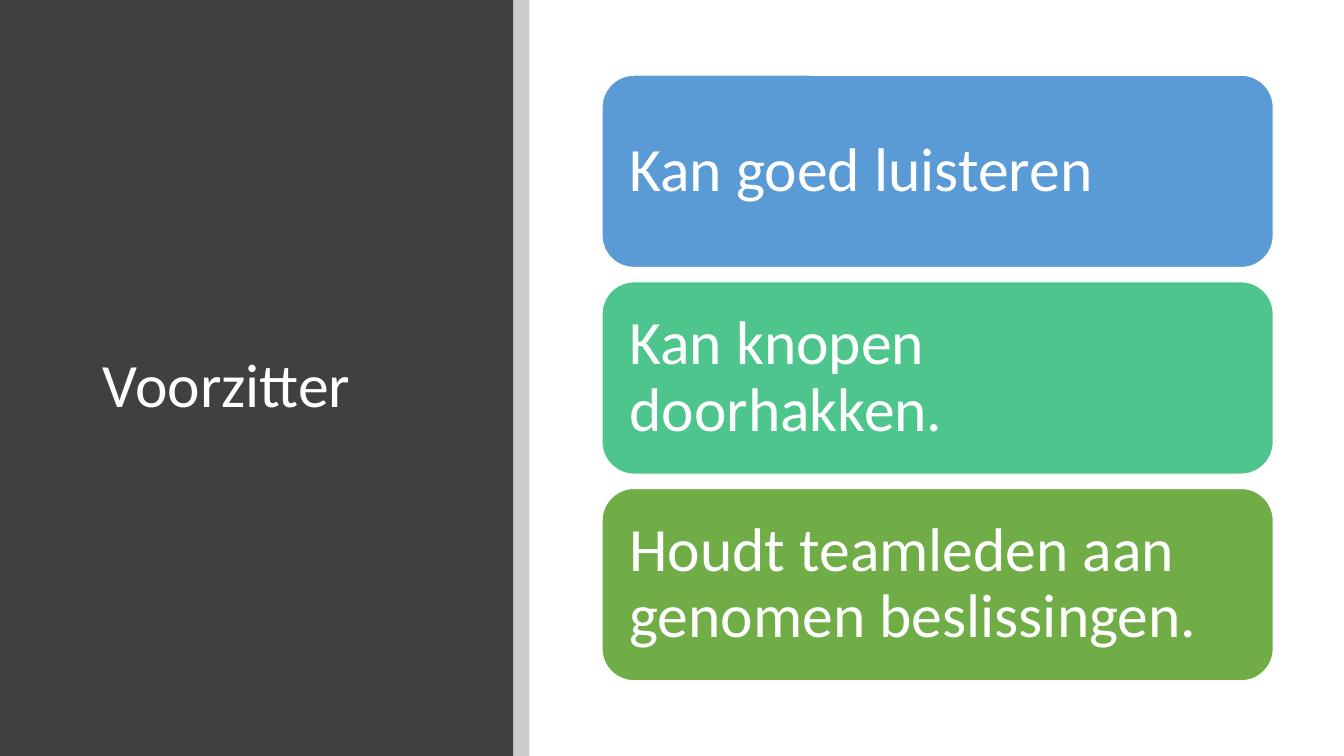
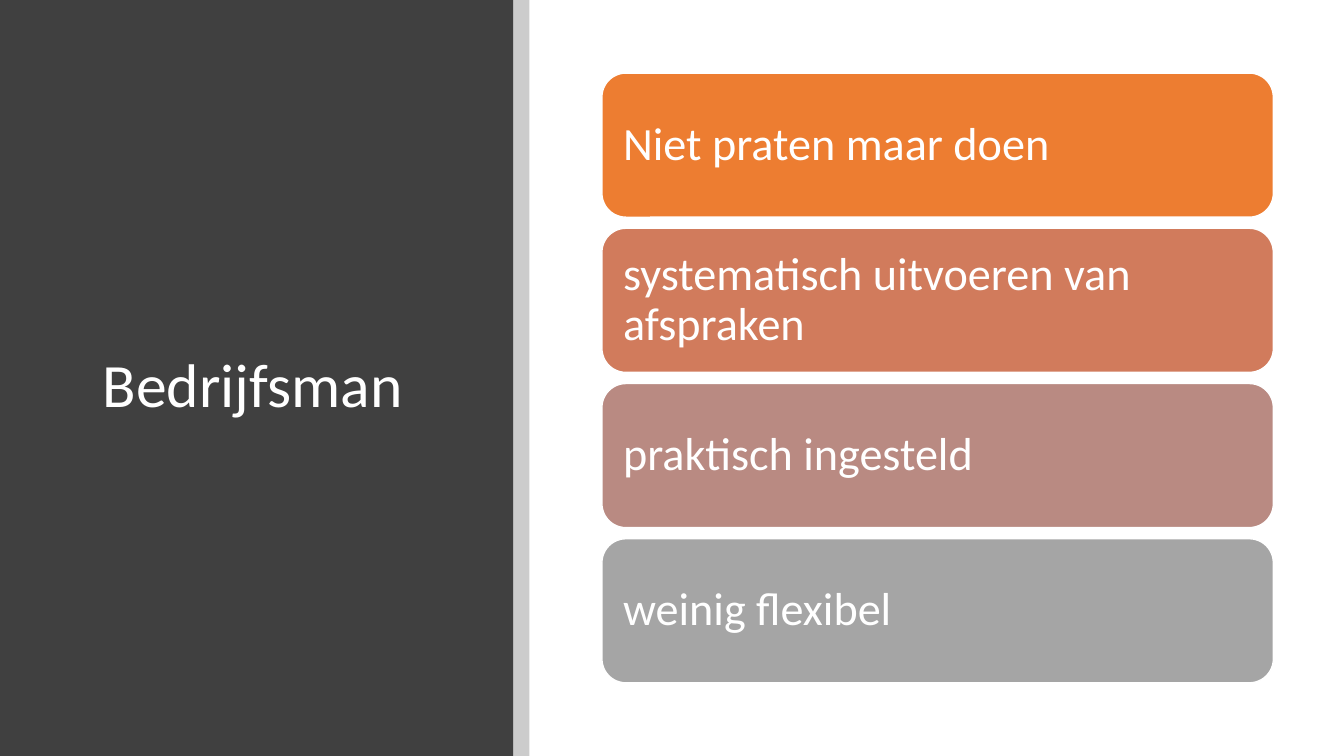
from dataclasses import dataclass

from lxml import etree
from pptx import Presentation
from pptx.dml.color import RGBColor
from pptx.enum import shapes, text
from pptx.oxml import ns
from pptx.util import Inches, Pt


@dataclass(frozen=True)
class Theme:
    font: str = "Calibri"
    panel: str = "404040"
    strip: str = "000000"
    strip_opacity: int = 20
    white: str = "FFFFFF"
    title_size: int = 44
    line_spacing: float = 0.9


@dataclass(frozen=True)
class Card:
    label: str
    color: str


@dataclass(frozen=True)
class Role:
    title: str
    cards: tuple[Card, ...]
    card_height: float
    gap: float
    inset: float
    size: int


THEME = Theme()
SLIDE_W, SLIDE_H = 13.33, 7.5
PANEL_W, STRIP_W = 5.09, 0.16
CARD_LEFT, CARD_W = 5.97, 6.66
CARD_RIGHT_INSET = 0.25

ROLES = (
    Role("Voorzitter", (
        Card("Kan goed luisteren", "5B9BD5"),
        Card("Kan knopen doorhakken.", "4DC58D"),
        Card("Houdt teamleden aan genomen beslissingen.", "70AD47"),
    ), card_height=1.91, gap=0.14, inset=0.18, size=44),
    Role("Bedrijfsman", (
        Card("Niet praten maar doen", "ED7D31"),
        Card("systematisch uitvoeren van afspraken", "D17B5C"),
        Card("praktisch ingesteld", "B98A82"),
        Card("weinig flexibel", "A5A5A5"),
    ), card_height=1.43, gap=0.11, inset=0.14, size=33),
)


def add_box(s, kind, left: float, top: float, width: float, height: float, color: str):
    sp = s.shapes.add_shape(kind, Inches(left), Inches(top), Inches(width), Inches(height))
    sp.shadow.inherit = False
    sp.fill.solid()
    sp.fill.fore_color.rgb = RGBColor.from_string(color)
    sp.line.fill.background()
    return sp


def set_opacity(sp, percent: int) -> None:
    clr = sp.fill._xPr.find(ns.qn("a:solidFill"))[0]
    etree.SubElement(clr, ns.qn("a:alpha")).set("val", str(percent * 1000))


def set_text(sp, label: str, size: int) -> None:
    tf = sp.text_frame
    tf.word_wrap = True
    tf.vertical_anchor = text.MSO_ANCHOR.MIDDLE
    tf.text = label
    p = tf.paragraphs[0]
    p.alignment = text.PP_ALIGN.LEFT
    p.line_spacing = THEME.line_spacing
    r = p.runs[0]
    r.font.name = THEME.font
    r.font.size = Pt(size)
    r.font.color.rgb = RGBColor.from_string(THEME.white)


def add_title_panel(s, title: str) -> None:
    rect = shapes.MSO_SHAPE.RECTANGLE
    add_box(s, rect, 0, 0, PANEL_W, SLIDE_H, THEME.panel)
    strip = add_box(s, rect, PANEL_W, 0, STRIP_W, SLIDE_H, THEME.strip)
    set_opacity(strip, THEME.strip_opacity)
    tb = s.shapes.add_textbox(Inches(0.92), Inches(0.89), Inches(3.65), Inches(5.91))
    set_text(tb, title, THEME.title_size)


def add_cards(s, role: Role) -> None:
    pitch = role.card_height + role.gap
    top = (SLIDE_H - len(role.cards) * pitch + role.gap) / 2
    for i, card in enumerate(role.cards):
        sp = add_box(s, shapes.MSO_SHAPE.ROUNDED_RECTANGLE, CARD_LEFT, top + i * pitch,
                     CARD_W, role.card_height, card.color)
        sp.line.color.rgb = RGBColor.from_string(THEME.white)
        sp.line.width = Pt(1)
        tf = sp.text_frame
        tf.margin_left = tf.margin_top = tf.margin_bottom = Inches(role.inset)
        tf.margin_right = Inches(CARD_RIGHT_INSET)
        set_text(sp, card.label, role.size)


def main() -> None:
    prs = Presentation()
    prs.slide_width, prs.slide_height = Inches(SLIDE_W), Inches(SLIDE_H)
    for role in ROLES:
        s = prs.slides.add_slide(prs.slide_layouts[6])
        add_title_panel(s, role.title)
        add_cards(s, role)
    prs.save("out.pptx")


if __name__ == "__main__":
    main()
